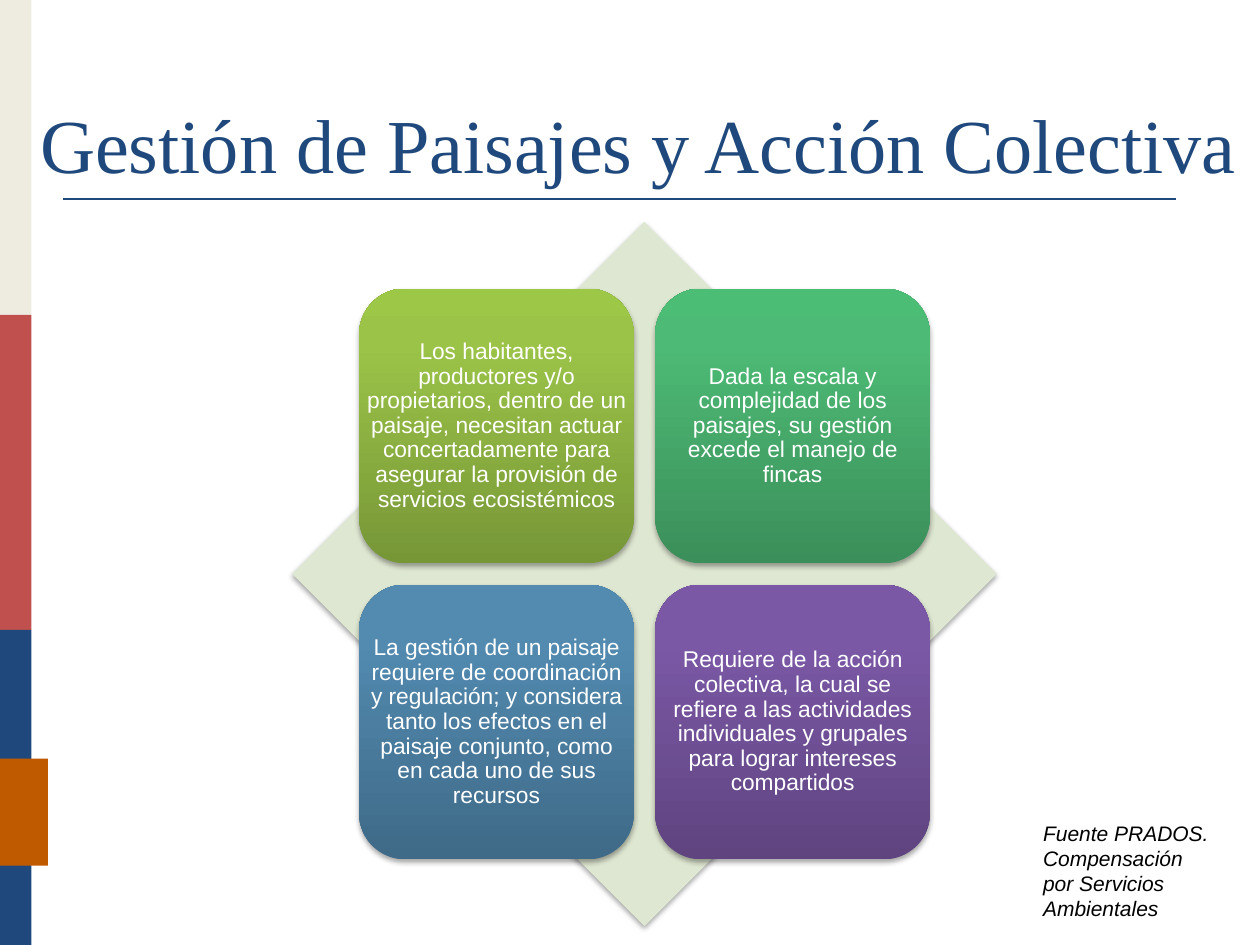
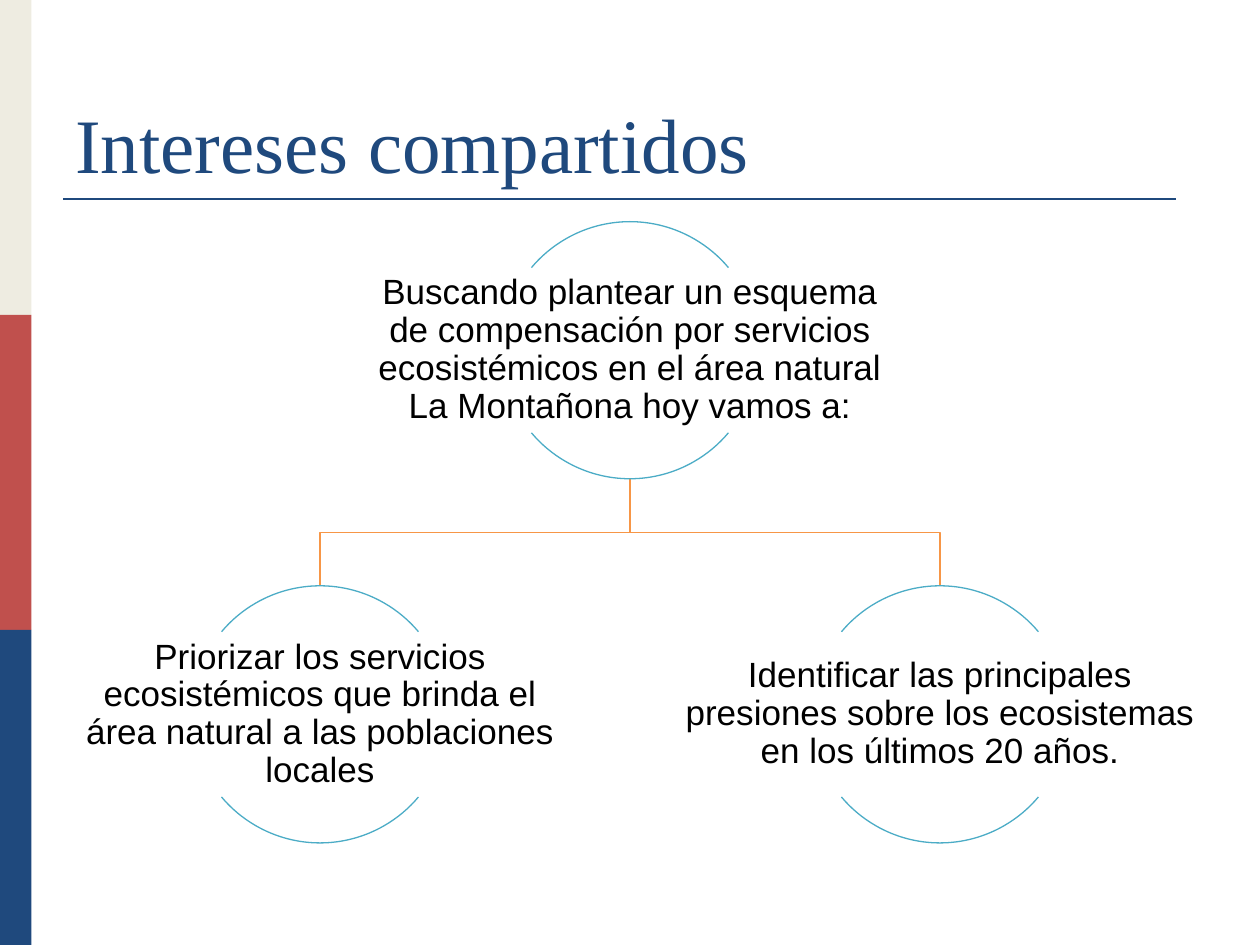
from copy import deepcopy

from lxml import etree
from pptx import Presentation
from pptx.dml.color import RGBColor
from pptx.enum.shapes import MSO_CONNECTOR, MSO_SHAPE
from pptx.enum.text import MSO_ANCHOR, PP_ALIGN
from pptx.oxml.ns import qn
from pptx.util import Inches, Pt

RECTANGLE = MSO_SHAPE.RECTANGLE
ROUNDED = MSO_SHAPE.ROUNDED_RECTANGLE
DIAMOND = MSO_SHAPE.DIAMOND
ARC = MSO_SHAPE.ARC
STRAIGHT = MSO_CONNECTOR.STRAIGHT
CENTER = PP_ALIGN.CENTER
LEFT = PP_ALIGN.LEFT
TOP = MSO_ANCHOR.TOP
MIDDLE = MSO_ANCHOR.MIDDLE
BOTTOM = MSO_ANCHOR.BOTTOM

BODY_FONT = "Arial"
TITLE_FONT = "Times New Roman"
NAVY = "1F497D"
BAND_COLORS = ["EEECE1", "C0504D", NAVY]
ACCENT = "BF5A00"
PALE_GREEN = "DEE7D1"
TEAL = "4BACC6"
ORANGE = "F79646"
WHITE = "FFFFFF"
BLACK = "000000"

CARDS = [
    ("Los habitantes, productores y/o propietarios, dentro de un paisaje, "
     "necesitan actuar concertadamente para asegurar la provisión de "
     "servicios ecosistémicos", ["779737", "9BC348", "9DC746"]),
    ("Dada la escala y complejidad de los paisajes, su gestión excede el "
     "manejo de fincas", ["3B8F5A", "4DBA75", "4BBD75"]),
    ("La gestión de un paisaje requiere de coordinación y regulación; y "
     "considera tanto los efectos en el paisaje conjunto, como en cada uno "
     "de sus recursos", ["3F6A88", "528AB0", "518BB3"]),
    ("Requiere de la acción colectiva, la cual se refiere a las actividades "
     "individuales y grupales para lograr intereses compartidos",
     ["5F4480", "7B58A6", "7C57A8"]),
]
CARD_SIZE = 2.18
CARD_PITCH = 2.35
CARD_LEFT, CARD_TOP = 2.85, 2.29

GOAL = ("Buscando plantear un esquema de compensación por servicios "
        "ecosistémicos en el área natural La Montañona hoy vamos a:")
TASKS = [
    (2.54, "Priorizar los servicios ecosistémicos que brinda el área natural "
           "a las poblaciones locales"),
    (7.46, "Identificar las principales presiones sobre los ecosistemas en "
           "los últimos 20 años."),
]
GOAL_CENTER = 5
GOAL_TOP, TASK_TOP = 1.76, 4.65
CIRCLE_SIZE = 2.04
ARC_RANGES = [(132, 192), (24, 84)]


def color(hex_value):
    return RGBColor.from_string(hex_value)


def add_filled_shape(slide, kind, left, top, width, height, fill=None):
    shape = slide.shapes.add_shape(
        kind, Inches(left), Inches(top), Inches(width), Inches(height))
    shape.shadow.inherit = False
    shape.line.fill.background()
    if fill:
        shape.fill.solid()
        shape.fill.fore_color.rgb = color(fill)
    return shape


def add_text(slide, text, left, top, width, height, size, hex_value,
             font=BODY_FONT, align=LEFT, anchor=TOP, inset=None,
             line_spacing=None, italic=False):
    box = slide.shapes.add_textbox(
        Inches(left), Inches(top), Inches(width), Inches(height))
    frame = box.text_frame
    frame.word_wrap = True
    frame.vertical_anchor = anchor
    if inset is not None:
        frame.margin_left = frame.margin_right = Inches(inset)
        frame.margin_top = frame.margin_bottom = Inches(inset)
    paragraph = frame.paragraphs[0]
    paragraph.alignment = align
    paragraph.line_spacing = line_spacing
    run = paragraph.add_run()
    run.text = text
    run.font.name = font
    run.font.size = Pt(size)
    run.font.italic = italic
    run.font.color.rgb = color(hex_value)
    return paragraph


def add_soft_shadow(shape):
    effects = shape._element.spPr.find(qn("a:effectLst"))
    shadow = etree.SubElement(
        effects, qn("a:outerShdw"), blurRad="40000", dist="23000",
        dir="5400000", rotWithShape="0")
    shade = etree.SubElement(shadow, qn("a:srgbClr"), val=BLACK)
    etree.SubElement(shade, qn("a:alpha"), val="35000")


def set_gradient(shape, hex_values):
    shape.fill.gradient()
    shape.fill.gradient_angle = 90
    stop_list = shape._element.spPr.find(".//" + qn("a:gsLst"))
    stop_list.append(deepcopy(stop_list[-1]))
    positions = [0, 0.8, 1]
    for stop, position, hex_value in zip(
            shape.fill.gradient_stops, positions, hex_values):
        stop.position = position
        stop.color.rgb = color(hex_value)


def add_base_slide(presentation, title, left, top, width, height, size):
    slide = presentation.slides.add_slide(presentation.slide_layouts[6])
    for index, band_color in enumerate(BAND_COLORS):
        add_filled_shape(slide, RECTANGLE, 0, 2.5 * index, 0.25, 2.5, band_color)
    rule = slide.shapes.add_connector(
        STRAIGHT, Inches(0.5), Inches(1.58), Inches(9.33), Inches(1.58))
    rule.line.color.rgb = color(NAVY)
    rule.line.width = Pt(1.5)
    etree.SubElement(rule._element.spPr, qn("a:effectLst"))
    add_text(slide, title, left, top, width, height, size, NAVY,
             font=TITLE_FONT, anchor=BOTTOM)
    return slide


def add_card(slide, text, hex_values, left, top):
    card = add_filled_shape(slide, ROUNDED, left, top, CARD_SIZE, CARD_SIZE)
    set_gradient(card, hex_values)
    add_soft_shadow(card)
    add_text(slide, text, left, top, CARD_SIZE, CARD_SIZE, 13, WHITE,
             align=CENTER, anchor=MIDDLE, inset=0.05, line_spacing=0.9)


def add_source_note(slide, text):
    paragraph = add_text(slide, text, 7.68, 6.46, 2.09, 0.91, 12, BLACK,
                         italic=True)
    properties = paragraph._p.get_or_add_pPr()
    properties.set("marL", str(Inches(0.5)))
    properties.set("indent", "0")


def add_circle_node(slide, text, center, top):
    for start, end in ARC_RANGES:
        arc = add_filled_shape(slide, ARC, center - CIRCLE_SIZE / 2, top,
                               CIRCLE_SIZE, CIRCLE_SIZE)
        arc.adjustments[0] = start
        arc.adjustments[1] = end
        arc.fill.background()
        arc.line.color.rgb = color(TEAL)
        arc.line.width = Pt(0.75)
    add_text(slide, text, center - 2.035, top + 0.37, 4.07, 1.3, 20, BLACK,
             align=CENTER, anchor=MIDDLE, inset=0.01, line_spacing=0.9)


def add_branch(slide, start_x, end_x, top, bottom):
    middle = (top + bottom) / 2
    points = [(start_x, middle), (end_x, middle), (end_x, bottom)]
    builder = slide.shapes.build_freeform(Inches(start_x), Inches(top))
    builder.add_line_segments(
        [(Inches(x), Inches(y)) for x, y in points], close=False)
    branch = builder.convert_to_shape()
    branch.shadow.inherit = False
    branch.fill.background()
    branch.line.color.rgb = color(ORANGE)
    branch.line.width = Pt(0.75)


def build_landscape_slide(presentation):
    slide = add_base_slide(presentation, "Gestión de Paisajes y Acción Colectiva",
                           0.22, 0.31, 9.78, 1.24, 43.6)
    diamond = add_filled_shape(slide, DIAMOND, 2.32, 1.76, 5.59, 5.59, PALE_GREEN)
    add_soft_shadow(diamond)
    for index, (text, hex_values) in enumerate(CARDS):
        row, column = divmod(index, 2)
        add_card(slide, text, hex_values, CARD_LEFT + column * CARD_PITCH,
                 CARD_TOP + row * CARD_PITCH)
    add_filled_shape(slide, RECTANGLE, 0, 6.02, 0.38, 0.85, ACCENT)
    add_source_note(slide, "Fuente PRADOS. Compensación por Servicios Ambientales")


def build_interests_slide(presentation):
    slide = add_base_slide(presentation, "Intereses compartidos",
                           0.5, 0.3, 9, 1.25, 44)
    for center, _ in reversed(TASKS):
        add_branch(slide, GOAL_CENTER, center, GOAL_TOP + CIRCLE_SIZE, TASK_TOP)
    add_circle_node(slide, GOAL, GOAL_CENTER, GOAL_TOP)
    for center, text in TASKS:
        add_circle_node(slide, text, center, TASK_TOP)


def main():
    presentation = Presentation()
    presentation.slide_width = Inches(10)
    presentation.slide_height = Inches(7.5)
    build_landscape_slide(presentation)
    build_interests_slide(presentation)
    presentation.save("out.pptx")


if __name__ == "__main__":
    main()
